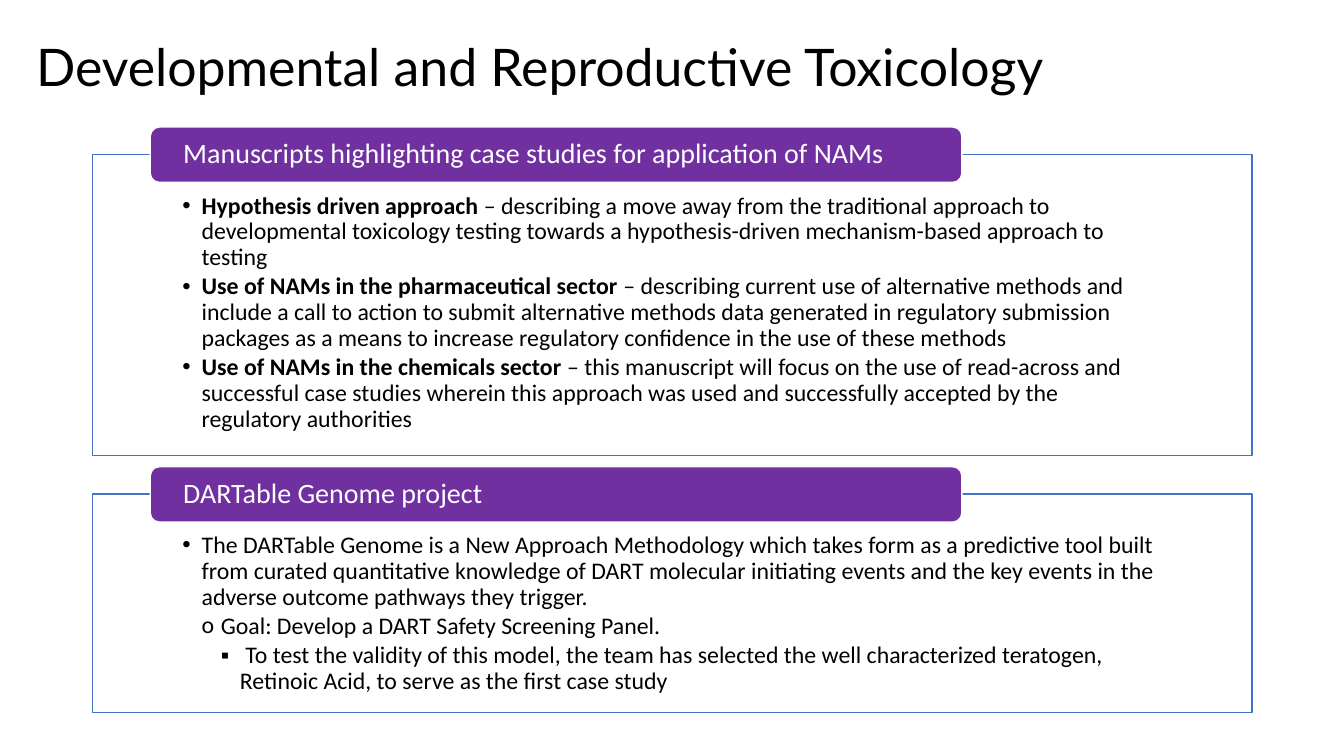
import dataclasses

import lxml.etree
import pptx
import pptx.dml.color
import pptx.enum.shapes
import pptx.enum.text
import pptx.oxml.ns
import pptx.util

PX = 9144  # EMU per px, 100 px to the inch

BLACK = pptx.dml.color.RGBColor(0x00, 0x00, 0x00)
WHITE = pptx.dml.color.RGBColor(0xFF, 0xFF, 0xFF)
BLUE = pptx.dml.color.RGBColor(0x44, 0x72, 0xC4)
PURPLE = pptx.dml.color.RGBColor(0x70, 0x30, 0xA0)

SHAPE = pptx.enum.shapes.MSO_SHAPE
ANCHOR = pptx.enum.text.MSO_ANCHOR
BULLETS = {1: "•", 2: "o", 3: "▪"}
INDENT = 19


@dataclasses.dataclass
class Item:
    lead: str
    body: str
    level: int = 1


@dataclasses.dataclass
class Panel:
    head: str
    top: int
    height: int
    items: list[Item]


PANELS = [
    Panel("Manuscripts highlighting case studies for application of NAMs", 153, 299, [
        Item("Hypothesis driven approach ",
             "– describing a move away from the traditional approach to developmental "
             "toxicology testing towards a hypothesis-driven mechanism-based approach "
             "to testing"),
        Item("Use of NAMs in the pharmaceutical sector ",
             "– describing current use of alternative methods and include a call to "
             "action to submit alternative methods data generated in regulatory "
             "submission packages as a means to increase regulatory confidence in the "
             "use of these methods"),
        Item("Use of NAMs in the chemicals sector ",
             "– this manuscript will focus on the use of read-across and successful "
             "case studies wherein this approach was used and successfully accepted "
             "by the regulatory authorities"),
    ]),
    Panel("DARTable Genome project", 490, 217, [
        Item("", "The DARTable Genome is a New Approach Methodology which takes form as "
             "a predictive tool built from curated quantitative knowledge of DART "
             "molecular initiating events and the key events in the adverse outcome "
             "pathways they trigger."),
        Item("", "Goal: Develop a DART Safety Screening Panel.", 2),
        Item("", " To test the validity of this model, the team has selected the well "
             "characterized teratogen, Retinoic Acid, to serve as the first case "
             "study", 3),
    ]),
]


def px(num: int) -> pptx.util.Emu:
    return pptx.util.Emu(num * PX)


def set_frame(frame, anchor, left: int, top: int, right: int, bottom: int) -> None:
    frame.word_wrap = True
    frame.vertical_anchor = anchor
    frame.margin_left, frame.margin_top = px(left), px(top)
    frame.margin_right, frame.margin_bottom = px(right), px(bottom)


def style(para, size: int, color, face: str = "Calibri") -> None:
    para.alignment = pptx.enum.text.PP_ALIGN.LEFT
    para.line_spacing = 0.9
    for run in para.runs:
        run.font.size = pptx.util.Pt(size)
        run.font.name = face
        run.font.color.rgb = color


def add_box(slide, kind, rect: tuple[int, int, int, int], fill, line):
    box = slide.shapes.add_shape(kind, *map(px, rect))
    box.shadow.inherit = False
    box.fill.solid()
    box.fill.fore_color.rgb = fill
    box.line.color.rgb = line
    box.line.width = pptx.util.Pt(1)
    return box


def add_mark(para, level: int) -> None:
    props = para._p.get_or_add_pPr()
    props.set("marL", str(px(INDENT * level)))
    props.set("indent", str(px(-INDENT)))
    face = "Calibri" if level == 2 else "Arial"
    for tag, key, value in (("a:buFont", "typeface", face),
                            ("a:buChar", "char", BULLETS[level])):
        lxml.etree.SubElement(props, pptx.oxml.ns.qn(tag)).set(key, value)


def add_item(para, item: Item) -> None:
    para.level = item.level
    add_mark(para, item.level)
    para.text = item.lead or item.body
    if item.lead:
        para.add_run().text = item.body
        para.runs[0].font.bold = True
    para.space_after = pptx.util.Pt(2.6)
    style(para, 17, BLACK)


def add_panel(slide, panel: Panel) -> None:
    # Outlined body with its bullets
    body = add_box(slide, SHAPE.RECTANGLE, (92, panel.top, 1150, panel.height),
                   WHITE, BLUE)
    color = body.fill._xPr.find(".//" + pptx.oxml.ns.qn("a:srgbClr"))
    lxml.etree.SubElement(color, pptx.oxml.ns.qn("a:alpha")).set("val", "90000")
    frame = body.text_frame
    set_frame(frame, ANCHOR.TOP, 89, 39, 89, 13)
    for num, item in enumerate(panel.items):
        add_item(frame.add_paragraph() if num else frame.paragraphs[0], item)

    # Heading across the top edge
    head = add_box(slide, SHAPE.ROUNDED_RECTANGLE, (149, panel.top - 27, 805, 55),
                   PURPLE, WHITE)
    set_frame(head.text_frame, ANCHOR.MIDDLE, 30, 0, 30, 0)
    head.text_frame.text = panel.head
    style(head.text_frame.paragraphs[0], 20, WHITE)


def main() -> None:
    deck = pptx.Presentation()
    deck.slide_width, deck.slide_height = px(1333), px(750)
    slide = deck.slides.add_slide(deck.slide_layouts[6])

    # Title
    title = slide.shapes.add_textbox(px(26), px(24), px(1150), px(145)).text_frame
    set_frame(title, ANCHOR.MIDDLE, 10, 5, 10, 60)
    title.text = "Developmental and Reproductive Toxicology"
    style(title.paragraphs[0], 37, BLACK, "Lato")

    # Panels
    for panel in PANELS:
        add_panel(slide, panel)

    deck.save("out.pptx")


if __name__ == "__main__":
    main()
